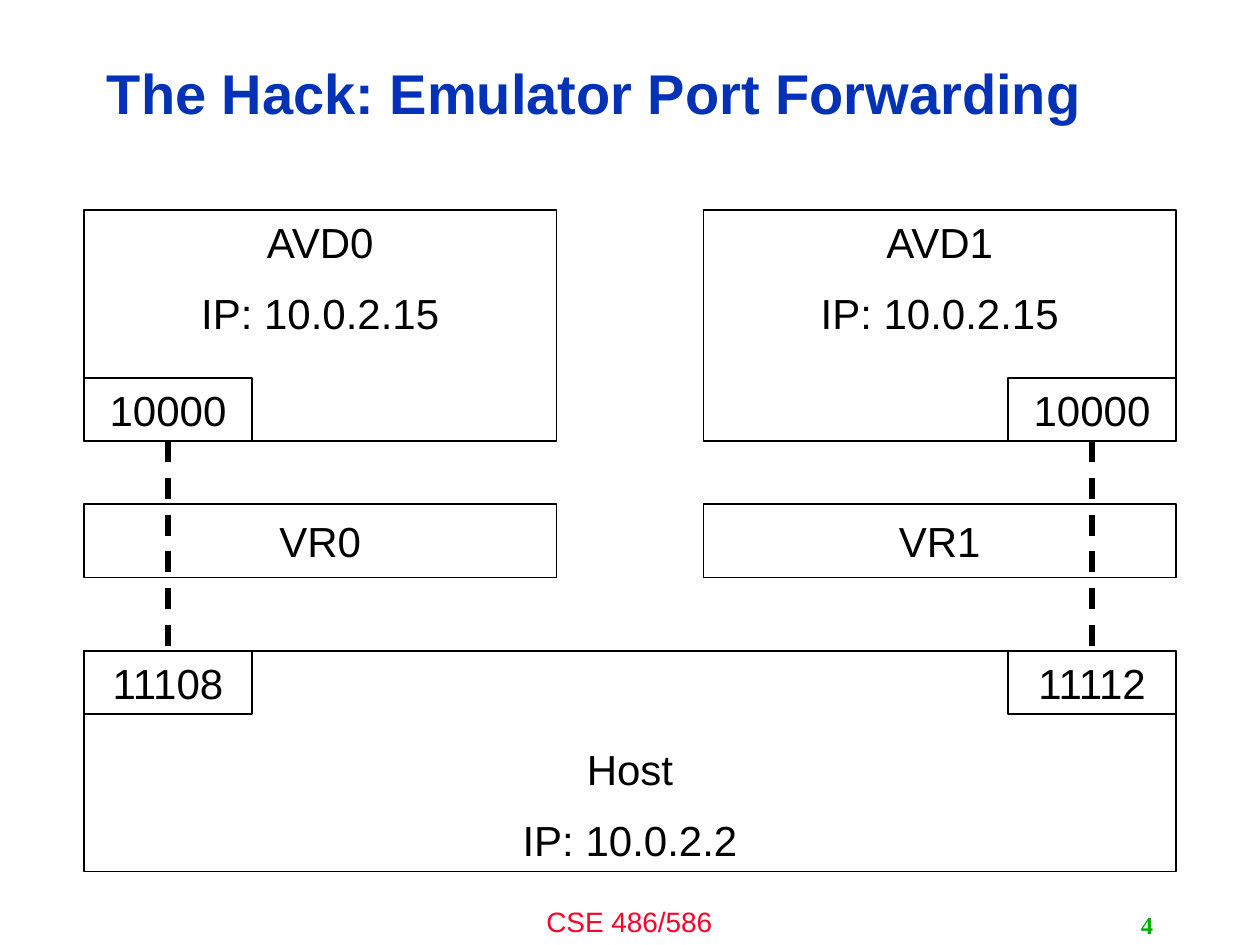
from pptx import Presentation
from pptx.dml.color import RGBColor
from pptx.enum.dml import MSO_LINE
from pptx.enum.shapes import MSO_CONNECTOR as Link, MSO_SHAPE as Preset
from pptx.enum.text import MSO_ANCHOR as Anchor, PP_ALIGN as Align
from pptx.oxml.ns import qn
from pptx.util import Inches, Pt
from lxml.etree import SubElement

UNIT = Inches(1) / 12  # the diagram sits on a grid of twelfths of an inch
PORT_W, PORT_H = 16, 6
BLACK, WHITE, BLUE, RED, GREEN = "000000", "FFFFFF", "0332B7", "FC0128", "00AE00"


def color(value):
    return RGBColor.from_string(value)


def grid(*units):
    return [round(unit * UNIT) for unit in units]


def write(frame, lines, anchor=Anchor.MIDDLE, align=Align.CENTER, wrap=True,
          half_gap=True, line_spacing=None, **font):
    frame.word_wrap = wrap
    frame.vertical_anchor = anchor
    look = {"name": "Arial", "size": Pt(24), "bold": False, "ink": BLACK, **font}
    ink = look.pop("ink")
    for index, line in enumerate(lines):
        paragraph = frame.add_paragraph() if index else frame.paragraphs[0]
        paragraph.alignment = align
        paragraph.line_spacing = line_spacing
        if half_gap:  # space before of half a line
            before = SubElement(paragraph._p.get_or_add_pPr(), qn("a:spcBef"))
            SubElement(before, qn("a:spcPct")).set("val", "50000")
        run = paragraph.add_run()
        run.text = line
        for key, value in look.items():
            setattr(run.font, key, value)
        run.font.color.rgb = color(ink)


def label(slide, box, text, **style):
    area = slide.shapes.add_textbox(*[Inches(length) for length in box])
    write(area.text_frame, [text], **style)


def node(slide, box, *lines, anchor=Anchor.MIDDLE):
    rect = slide.shapes.add_shape(Preset.RECTANGLE, *grid(*box))
    rect.shadow.inherit = False
    rect.fill.solid()
    rect.fill.fore_color.rgb = color(WHITE)
    rect.line.color.rgb = color(BLACK)
    rect.line.width = Pt(1)
    write(rect.text_frame, lines, anchor=anchor)
    return rect


def port(slide, box, number, right, bottom):
    """A port in the chosen corner of the box."""
    left, top, width, height = box
    x = left + (width - PORT_W) * right
    y = top + (height - PORT_H) * bottom
    return node(slide, (x, y, PORT_W, PORT_H), number)


def forward(slide, source, target):
    """Dashed line from the bottom of one port to the top of another."""
    link = slide.shapes.add_connector(Link.STRAIGHT, 0, 0, 0, 0)
    link.begin_connect(source, 2)
    link.end_connect(target, 0)
    link.line.color.rgb = color(BLACK)
    link.line.width = Pt(3)
    link.line.dash_style = MSO_LINE.DASH
    SubElement(link._element.spPr, qn("a:effectLst"))


def diagram(slide, box):
    left, top, width, height = box
    device_w = 45
    columns = [left, left + width - device_w]
    devices = [(x, top, device_w, 22) for x in columns]
    host = (left, top + height - 21, width, 21)

    # Devices, virtual routers and host
    for index, device in enumerate(devices):
        node(slide, device, f"AVD{index}", "IP: 10.0.2.15", anchor=Anchor.TOP)
    for index, x in enumerate(columns):
        node(slide, (x, top + 28, device_w, 7), f"VR{index}")
    node(slide, host, "Host", "IP: 10.0.2.2", anchor=Anchor.BOTTOM)

    # Ports and the forwarding between them
    inner = [port(slide, device, "10000", side, 1) for side, device in enumerate(devices)]
    outer = [port(slide, host, number, side, 0)
             for side, number in enumerate(["11108", "11112"])]
    for source, target in zip(inner, outer):
        forward(slide, source, target)


def main():
    deck = Presentation()
    deck.slide_width, deck.slide_height = Inches(10), Inches(7.5)
    slide = deck.slides.add_slide(deck.slide_layouts[6])

    # Footer, title and page number
    label(slide, (3.33, 7.13, 3.33, 0.37), "CSE 486/586", anchor=Anchor.TOP,
          size=Pt(16), ink=RED)
    label(slide, (0.75, 0.36, 7.98, 0.81), "The Hack: Emulator Port Forwarding",
          align=Align.LEFT, half_gap=False, line_spacing=0.9,
          size=Pt(32), bold=True, ink=BLUE)
    label(slide, (7.17, 7.18, 2.08, 0.32), "4", align=Align.RIGHT, wrap=False,
          half_gap=False, name="Times New Roman", size=Pt(14), bold=True, ink=GREEN)

    diagram(slide, (8, 20, 104, 63))
    deck.save("out.pptx")


if __name__ == "__main__":
    main()
